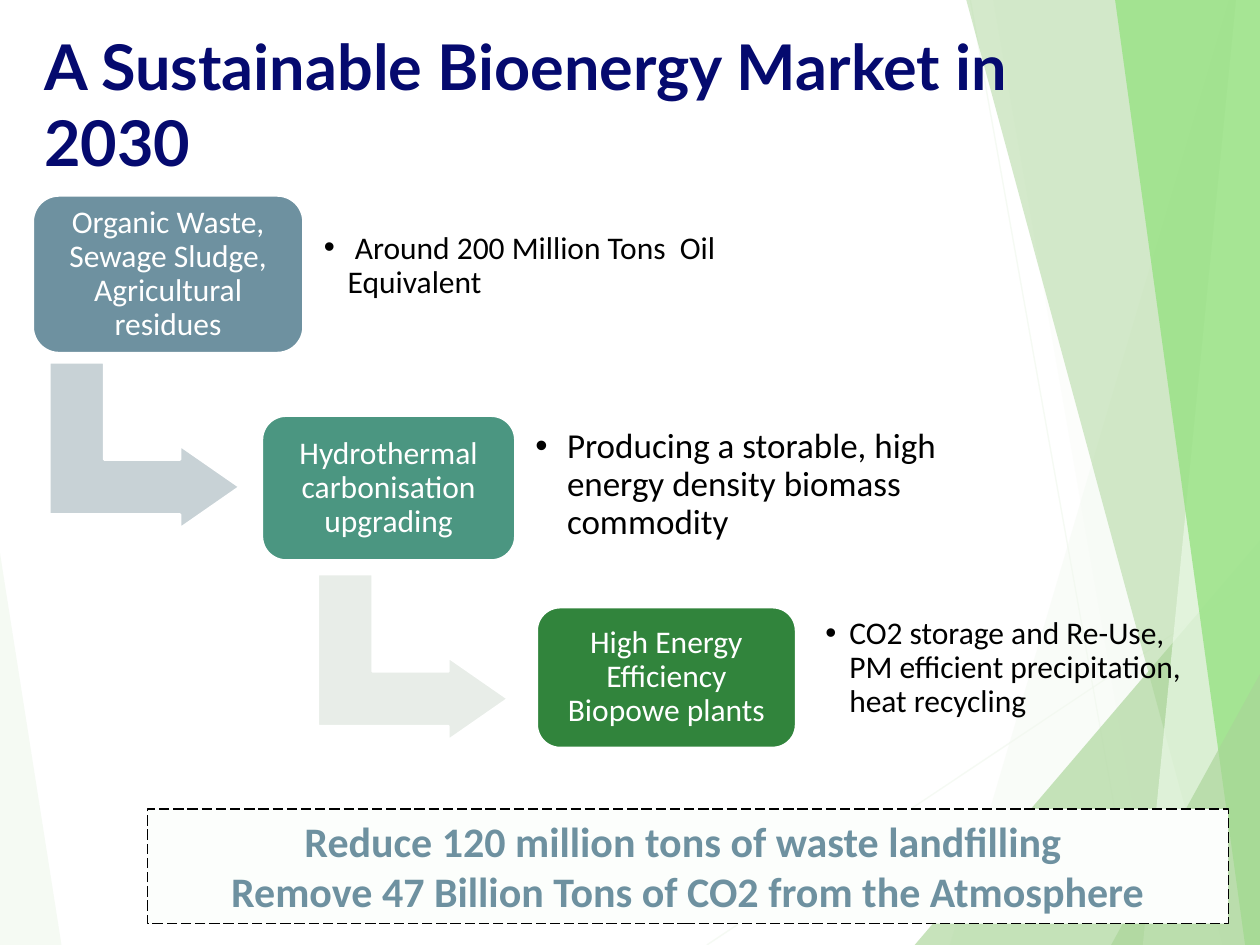
from dataclasses import dataclass

from lxml import etree
from pptx import Presentation
from pptx.dml.color import RGBColor
from pptx.enum.dml import MSO_LINE
from pptx.enum.shapes import MSO_CONNECTOR, MSO_SHAPE
from pptx.enum.text import MSO_ANCHOR, MSO_AUTO_SIZE, PP_ALIGN
from pptx.oxml.ns import qn
from pptx.util import Cm, Pt

STRAIGHT = MSO_CONNECTOR.STRAIGHT
RECTANGLE = MSO_SHAPE.RECTANGLE
ROUNDED = MSO_SHAPE.ROUNDED_RECTANGLE
BENT_ARROW = MSO_SHAPE.BENT_UP_ARROW
LONG_DASH = MSO_LINE.LONG_DASH
TOP, MIDDLE = MSO_ANCHOR.TOP, MSO_ANCHOR.MIDDLE
NO_AUTOFIT = MSO_AUTO_SIZE.NONE
LEFT, CENTER = PP_ALIGN.LEFT, PP_ALIGN.CENTER

WIDTH, HEIGHT = 25.4, 19.05
COMPARISON_LAYOUT = 4
Box = tuple[float, float, float, float]


@dataclass
class Facet:
    top_x: float
    top_y: float
    bottom_x: float
    outer_x: float
    color: str
    opacity: int


@dataclass
class Ray:
    start: tuple[float, float]
    end: tuple[float, float]


@dataclass
class Stage:
    name: str
    color: str
    card: Box
    note: str
    note_box: Box
    note_size: int = 18
    indent: float = 0.48
    inset: float = 0.18


@dataclass
class Step:
    box: Box
    color: str


RAYS = [Ray((14.25, 19.05), (25.4, 11.61)), Ray((19.56, 0), (22.96, 19.05))]

FACETS = [
    Facet(0, 11.15, 1.24, 0, "F1F8EE", 70),
    Facet(24.77, 0, 19.15, WIDTH, "F1F8EE", 36),
    Facet(20.02, 0, 23.34, WIDTH, "F1F8EE", 20),
    Facet(25.4, 10.9, 18.44, WIDTH, "AAD598", 66),
    Facet(19.48, 0, 24.64, WIDTH, "AAD598", 50),
    Facet(24.92, 0, 23.04, WIDTH, "EAF9E6", 70),
    Facet(22.48, 0, 25.1, WIDTH, "99E285", 82),
    Facet(25.4, 13.59, 22.4, WIDTH, "AAD598", 66),
]

STAGES = [
    Stage("Organic Waste, Sewage Sludge, Agricultural residues", "6E91A0",
          (0.66, 3.94, 5.46, 3.18),
          " Around 200 Million Tons  Oil Equivalent", (6.35, 3.76, 10.24, 3.2)),
    Stage("Hydrothermal carbonisation upgrading", "4B9681",
          (5.28, 8.38, 5.11, 2.92),
          "Producing a storable, high energy density biomass commodity",
          (10.59, 8.18, 9.12, 3.2), 20, 0.64, 0.2),
    Stage("High Energy Efficiency Biopowe plants", "31843C",
          (10.82, 12.24, 5.23, 2.84),
          "CO2 storage and Re-Use, PM efficient precipitation, heat recycling",
          (16.46, 12.27, 7.87, 2.41)),
]

STEPS = [Step((1.24, 7.06, 3.35, 3.84), "C8D2D6"),
         Step((6.65, 11.33, 3.35, 3.84), "E8EDE8")]


def rgb(color: str) -> RGBColor:
    return RGBColor.from_string(color)


def set_opacity(shape, percent: int) -> None:
    for tint in shape._element.spPr.iter(qn("a:srgbClr")):
        etree.SubElement(tint, qn("a:alpha")).set("val", str(percent * 1000))


def place(shape, box: Box) -> None:
    shape.left, shape.top, shape.width, shape.height = map(Cm, box)


def set_text(shape, text: str, size: int, color: str, align, anchor=TOP,
             font: str = "Calibri", bold: bool = False,
             inset: float | None = None, spacing: float = 1) -> None:
    frame = shape.text_frame
    frame.text = text
    frame.word_wrap = True
    frame.auto_size = NO_AUTOFIT
    frame.vertical_anchor = anchor
    if inset is not None:
        frame.margin_left = frame.margin_right = Cm(inset)
        frame.margin_top = frame.margin_bottom = Cm(inset)
    for paragraph in frame.paragraphs:
        paragraph.alignment = align
        paragraph.line_spacing = spacing
        paragraph.space_before = Pt(0)
        for run in paragraph.runs:
            run.font.name = font
            run.font.size = Pt(size)
            run.font.bold = bold
            run.font.color.rgb = rgb(color)


def add_bullet(paragraph, indent: float) -> None:
    properties = paragraph._p.get_or_add_pPr()
    properties.set("marL", str(Cm(indent)))
    properties.set("indent", str(-Cm(indent)))
    etree.SubElement(properties, qn("a:buChar")).set("char", "•")


def draw_ray(shapes, ray: Ray) -> None:
    line = shapes.add_connector(STRAIGHT, *map(Cm, ray.start + ray.end))
    line.line.color.rgb = rgb("F1F8EE")
    line.line.width = Pt(0.75)
    set_opacity(line, 70)
    etree.SubElement(line._element.spPr, qn("a:effectLst"))


def draw_facet(shapes, facet: Facet) -> None:
    top_x, top_y, bottom_x, outer_x, bottom_y = map(
        Cm, (facet.top_x, facet.top_y, facet.bottom_x, facet.outer_x, HEIGHT))
    builder = shapes.build_freeform(top_x, top_y)
    builder.add_line_segments([(bottom_x, bottom_y), (outer_x, bottom_y),
                               (outer_x, top_y)])
    shape = builder.convert_to_shape()
    shape.shadow.inherit = False
    shape.fill.solid()
    shape.fill.fore_color.rgb = rgb(facet.color)
    shape.line.fill.background()
    set_opacity(shape, facet.opacity)


def draw_block(shapes, kind, box: Box, fill: str,
               outline: str = "FFFFFF", weight: float = 1.5):
    block = shapes.add_shape(kind, *map(Cm, box))
    block.shadow.inherit = False
    block.fill.solid()
    block.fill.fore_color.rgb = rgb(fill)
    block.line.color.rgb = rgb(outline)
    block.line.width = Pt(weight)
    return block


def draw_step(shapes, step: Step) -> None:
    arrow = draw_block(shapes, BENT_ARROW, step.box, step.color)
    arrow.rotation = 90
    for index, value in enumerate((0.33, 0.25, 0.36)):
        arrow.adjustments[index] = value


def draw_stage(shapes, stage: Stage, note) -> None:
    card = draw_block(shapes, ROUNDED, stage.card, stage.color)
    set_text(card, stage.name, 18, "FFFFFF", CENTER, MIDDLE, inset=0.18, spacing=0.9)
    place(note, stage.note_box)
    set_text(note, stage.note, stage.note_size, "000000", LEFT, MIDDLE,
             inset=stage.inset, spacing=0.9)
    add_bullet(note.text_frame.paragraphs[0], stage.indent)


def main() -> None:
    deck = Presentation()
    deck.slide_width, deck.slide_height = Cm(WIDTH), Cm(HEIGHT)
    slide = deck.slides.add_slide(deck.slide_layouts[COMPARISON_LAYOUT])
    shapes = slide.shapes
    title, *notes, spare = list(slide.placeholders)
    spare._element.getparent().remove(spare._element)

    for ray in RAYS:
        draw_ray(shapes, ray)
    for facet in FACETS:
        draw_facet(shapes, facet)
    for front in (title, *notes):
        shapes._spTree.append(front._element)

    place(title, (0.64, 0.43, 21.16, 3.33))
    set_text(title, "A Sustainable Bioenergy Market in 2030", 36, "050A6F", LEFT,
             font="Lato", bold=True)

    for step in STEPS:
        draw_step(shapes, step)
    for stage, note in zip(STAGES, notes):
        draw_stage(shapes, stage, note)

    impact = draw_block(shapes, RECTANGLE, (2.97, 16.31, 21.79, 2.31),
                        "FCFEFC", "000000", 0.75)
    impact.line.dash_style = LONG_DASH
    set_text(impact, "Reduce 120 million tons of waste landfilling \n"
             "Remove 47 Billion Tons of CO2 from the Atmosphere",
             24, "6E91A0", CENTER, bold=True)
    deck.save("out.pptx")


if __name__ == "__main__":
    main()
